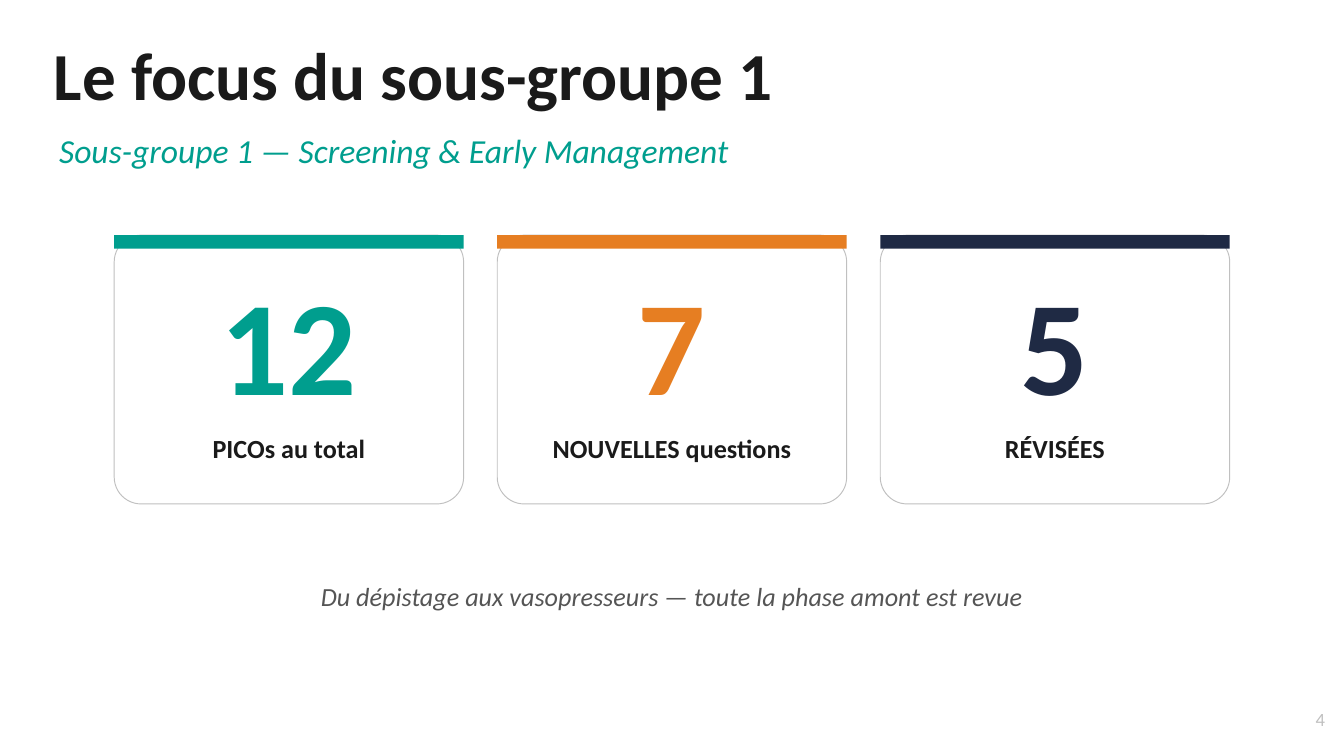
from pptx import Presentation
from pptx.dml.color import RGBColor
from pptx.enum.shapes import MSO_SHAPE
from pptx.enum.text import MSO_ANCHOR, MSO_AUTO_SIZE, PP_ALIGN
from pptx.util import Pt

WHITE = RGBColor(0xFF, 0xFF, 0xFF)
INK = RGBColor(0x1A, 0x1A, 0x1A)
TEAL = RGBColor(0x00, 0x9E, 0x8E)
ORANGE = RGBColor(0xE6, 0x7E, 0x22)
NAVY = RGBColor(0x1F, 0x2A, 0x44)
GREY = RGBColor(0x55, 0x55, 0x55)
SILVER = RGBColor(0xC0, 0xC0, 0xC0)

prs = Presentation()
prs.slide_width, prs.slide_height = Pt(720), Pt(405)
s = prs.slides.add_slide(prs.slide_layouts[5])


def write(sp, text, size, color, align=PP_ALIGN.LEFT, bold=False, italic=False,
          anchor=MSO_ANCHOR.TOP, inset=(2.88, 1.44), wrap=True):
    tf = sp.text_frame
    tf.word_wrap = wrap
    tf.auto_size = MSO_AUTO_SIZE.SHAPE_TO_FIT_TEXT
    tf.vertical_anchor = anchor
    tf.margin_left = tf.margin_right = Pt(inset[0])
    tf.margin_top = tf.margin_bottom = Pt(inset[1])
    p = tf.paragraphs[0]
    p.alignment = align
    r = p.add_run()
    r.text = text
    r.font.name, r.font.size = "Calibri", Pt(size)
    r.font.bold, r.font.italic = bold, italic
    r.font.color.rgb = color


def add_text(x, y, w, h, *args, **kwargs):
    sp = s.shapes.add_textbox(Pt(x), Pt(y), Pt(w), Pt(h))
    write(sp, *args, **kwargs)


# Title and subtitle
title = s.shapes.title
title.left, title.top, title.width, title.height = Pt(28.8), Pt(18), Pt(389.5), Pt(44)
write(title, "Le focus du sous-groupe 1", 36, INK, bold=True, inset=(0, 0), wrap=False)
add_text(28.8, 68.4, 648, 24.5, "Sous-groupe 1 — Screening & Early Management",
         18, TEAL, italic=True)

# Key figure cards
CARD_W, CARD_H, GAP, TOP = 187.2, 144, 18, 126
cards = [
    ("12", "PICOs au total", TEAL),
    ("7", "NOUVELLES questions", ORANGE),
    ("5", "RÉVISÉES", NAVY),
]
left = (720 - len(cards) * CARD_W - (len(cards) - 1) * GAP) / 2
for i, (number, label, color) in enumerate(cards):
    x = left + i * (CARD_W + GAP)
    card = s.shapes.add_shape(MSO_SHAPE.ROUNDED_RECTANGLE, Pt(x), Pt(TOP), Pt(CARD_W), Pt(CARD_H))
    card.adjustments[0] = 0.1
    card.shadow.inherit = False
    card.fill.solid()
    card.fill.fore_color.rgb = WHITE
    card.line.color.rgb = SILVER
    card.line.width = Pt(0.5)

    band = s.shapes.add_shape(MSO_SHAPE.RECTANGLE, Pt(x), Pt(TOP), Pt(CARD_W), Pt(7.2))
    band.shadow.inherit = False
    band.fill.solid()
    band.fill.fore_color.rgb = color
    band.line.fill.background()

    add_text(x, TOP + 12.24, CARD_W, 90, number, 72, color,
             PP_ALIGN.CENTER, bold=True, anchor=MSO_ANCHOR.MIDDLE)
    add_text(x, TOP + 104.4, CARD_W, 20, label, 14, INK, PP_ALIGN.CENTER, bold=True)

# Closing line and page number
add_text(28.8, 309.6, 662.4, 20, "Du dépistage aux vasopresseurs — toute la phase amont est revue",
         14, GREY, PP_ALIGN.CENTER, italic=True)
add_text(691.2, 378, 21.6, 15, "4", 10, SILVER, PP_ALIGN.RIGHT)

prs.save("out.pptx")
